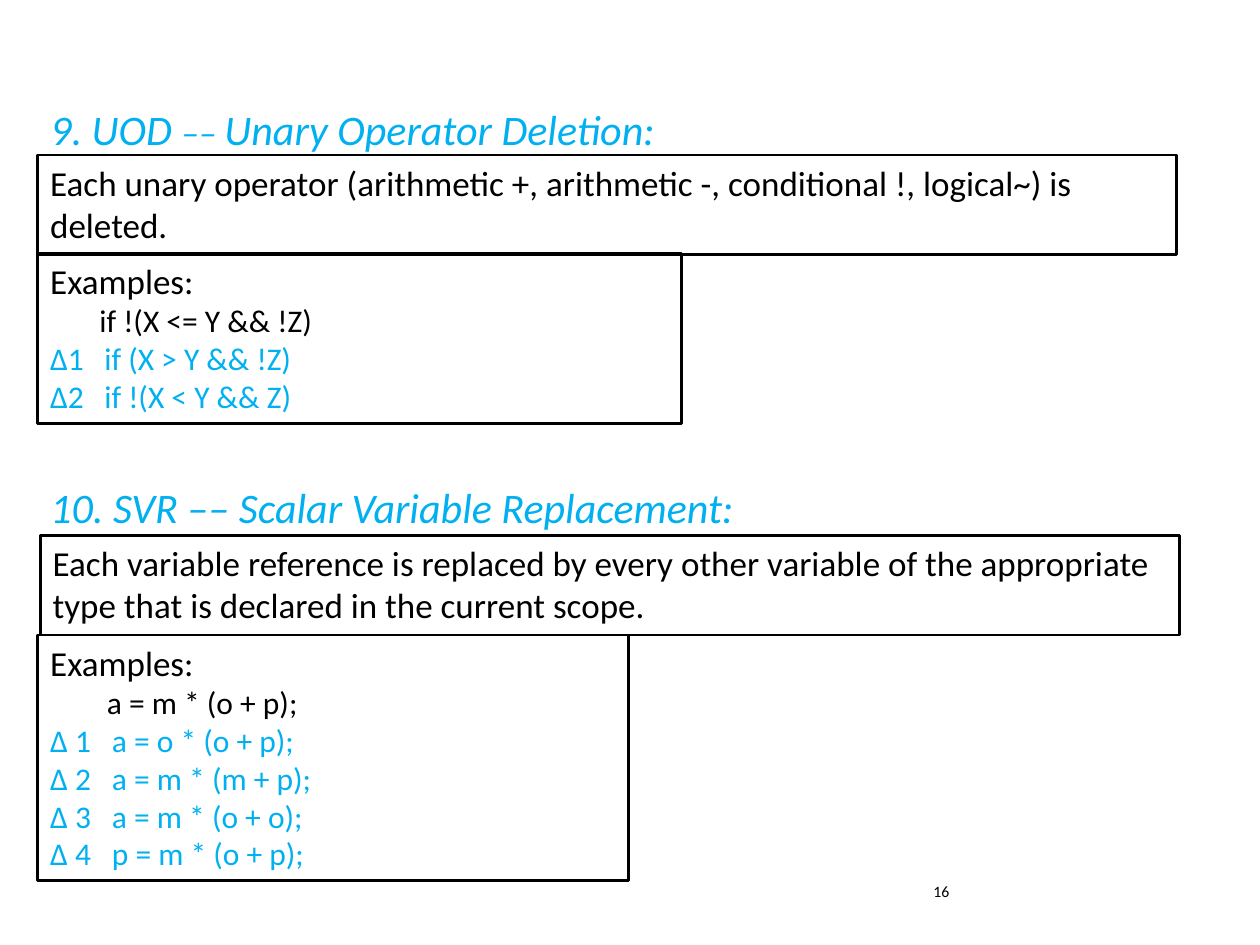
from pptx import Presentation
from pptx import util as u
from pptx.dml.color import RGBColor
from pptx.enum import shapes, text
from pptx.oxml.ns import qn
from lxml import etree

Inches, Pt = u.Inches, u.Pt
BLACK = RGBColor(0x00, 0x00, 0x00)
CYAN = RGBColor(0x00, 0xB0, 0xF0)
FONT = "Calibri"


def add_run(p, words, size, color=BLACK, italic=False):
    r = p.add_run()
    r.text = words
    r.font.size = Pt(size)
    r.font.name = FONT
    r.font.color.rgb = color
    r.font.italic = italic


def set_indent(p, left, first=0):
    pPr = p._p.get_or_add_pPr()
    pPr.set("marL", str(Inches(left)))
    pPr.set("indent", str(Inches(first)))
    return pPr


def set_frame(tf):
    tf.word_wrap = True
    tf.auto_size = text.MSO_AUTO_SIZE.NONE
    tf.vertical_anchor = text.MSO_ANCHOR.TOP


def place_heading(sp, box, runs):
    """Format a placeholder as an operator heading; runs are (words, size)."""
    sp.left, sp.top, sp.width, sp.height = map(Inches, box)
    tf = sp.text_frame
    set_frame(tf)
    p = tf.paragraphs[0]
    p.alignment = text.PP_ALIGN.LEFT
    p.space_before = Pt(0)
    etree.SubElement(set_indent(p, 0), qn("a:buNone"))
    for words, size in runs:
        add_run(p, words, size, CYAN, italic=True)


def add_frame(slide, box):
    """Add an outlined, unfilled box and return its text frame."""
    sp = slide.shapes.add_shape(shapes.MSO_SHAPE.RECTANGLE, *map(Inches, box))
    sp.shadow.inherit = False
    sp.fill.background()
    sp.line.color.rgb = BLACK
    sp.line.width = Pt(1.5)
    set_frame(sp.text_frame)
    sp.text_frame.paragraphs[0].alignment = text.PP_ALIGN.LEFT
    return sp.text_frame


def add_definition(slide, box, words):
    add_run(add_frame(slide, box).paragraphs[0], words, 20)


def add_examples(slide, box, statement, mutants, indents):
    """Original statement, then its labelled mutants on a hanging indent."""
    tf = add_frame(slide, box)
    add_run(tf.paragraphs[0], "Examples:", 20)
    statement_indent, mutant_indent = indents

    p = tf.add_paragraph()
    p.alignment = text.PP_ALIGN.LEFT
    set_indent(p, statement_indent)
    add_run(p, statement, 18)

    for label, code in mutants:
        p = tf.add_paragraph()
        p.alignment = text.PP_ALIGN.LEFT
        set_indent(p, mutant_indent, -mutant_indent)
        add_run(p, f"{label}\t{code}", 18, CYAN)


def add_page_number(slide, box, number):
    tf = slide.shapes.add_textbox(*map(Inches, box)).text_frame
    set_frame(tf)
    add_run(tf.paragraphs[0], number, 9)


def main():
    prs = Presentation()
    prs.slide_width, prs.slide_height = Inches(10), Inches(7.5)
    slide = prs.slides.add_slide(prs.slide_layouts[1])
    title, body = slide.placeholders

    # Unary operator deletion
    place_heading(title, (0.3, 0.77, 7.67, 0.5),
                  [("9. UOD ", 24), ("–– ", 20), ("Unary Operator Deletion:", 24)])
    add_definition(slide, (0.3, 1.23, 9.04, 0.79),
                   "Each unary operator (arithmetic +, arithmetic -, "
                   "conditional !, logical~) is deleted.")
    add_examples(slide, (0.3, 2.01, 5.11, 1.35), "if !(X <= Y && !Z)",
                 [("∆1", "if (X > Y && !Z)"), ("∆2", "if !(X < Y && Z)")],
                 (0.39, 0.43))

    # Scalar variable replacement
    place_heading(body, (0.3, 3.77, 9.46, 0.59),
                  [("10. SVR –– Scalar Variable Replacement:", 24)])
    add_definition(slide, (0.32, 4.25, 9.04, 0.79),
                   "Each variable reference is replaced by every other variable of the "
                   "appropriate type that is declared in the current scope.")
    codes = ["a = o * (o + p);", "a = m * (m + p);",
             "a = m * (o + o);", "p = m * (o + p);"]
    add_examples(slide, (0.3, 5.04, 4.69, 1.95), "a = m * (o + p);",
                 [(f"∆ {n}", code) for n, code in enumerate(codes, 1)],
                 (0.45, 0.49))

    add_page_number(slide, (7.31, 6.95, 2.69, 0.4), "16")
    prs.save("out.pptx")


if __name__ == "__main__":
    main()
